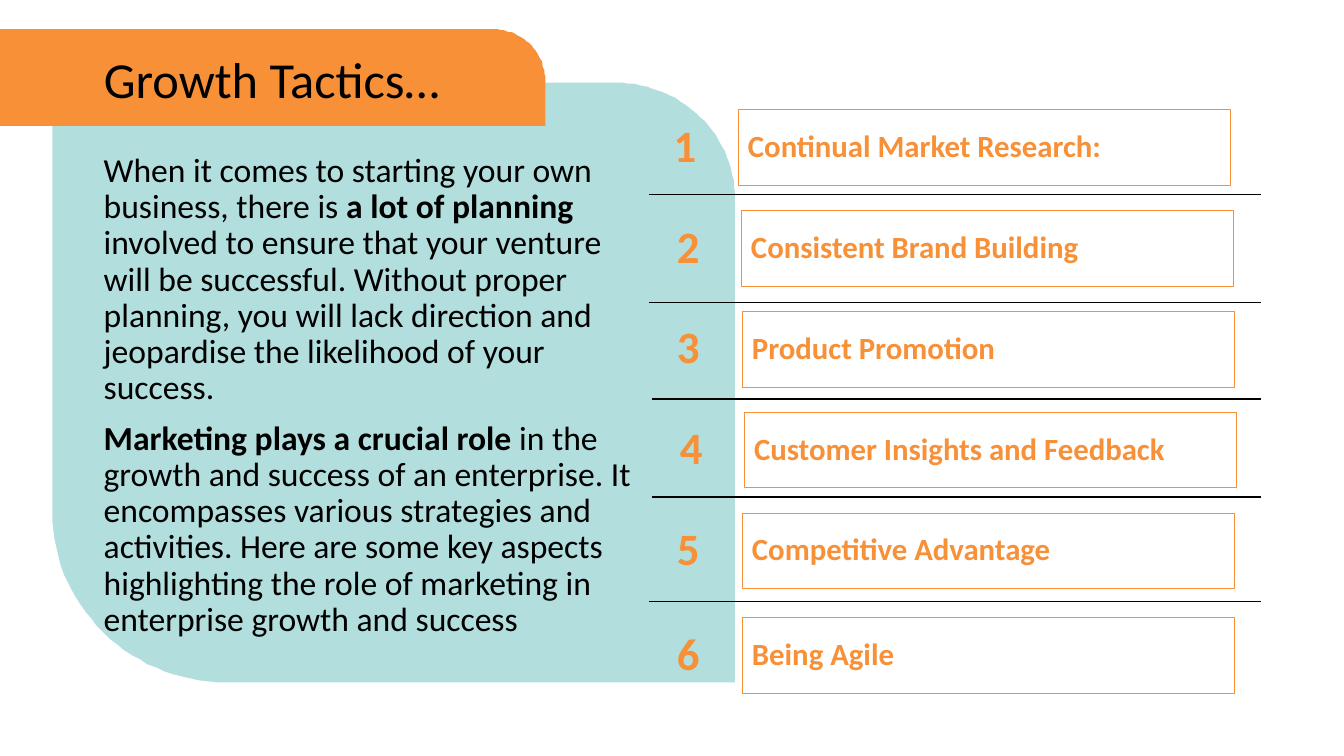
from math import cos, radians, sin

from lxml import etree
from pptx import Presentation
from pptx.dml.color import RGBColor
from pptx.enum.shapes import MSO_CONNECTOR, MSO_SHAPE
from pptx.enum.text import MSO_ANCHOR, MSO_AUTO_SIZE, PP_ALIGN
from pptx.oxml.ns import qn
from pptx.util import Pt

PX = 9144  # 100 px to the inch
RECTANGLE, STRAIGHT = MSO_SHAPE.RECTANGLE, MSO_CONNECTOR.STRAIGHT
TOP, MIDDLE = MSO_ANCHOR.TOP, MSO_ANCHOR.MIDDLE
LEFT, CENTER = PP_ALIGN.LEFT, PP_ALIGN.CENTER
NO_AUTOFIT = MSO_AUTO_SIZE.NONE
color = RGBColor.from_string
ORANGE, TEAL, BLACK = "F79037", "B2DEDD", "000000"
TITLE_ONLY = 5


def write(shape, paragraphs, size, ink=BLACK, align=LEFT, anchor=MIDDLE):
    """Each paragraph is a list of (text, bold) runs."""
    frame = shape.text_frame
    frame.word_wrap = True
    frame.auto_size = NO_AUTOFIT
    frame.vertical_anchor = anchor
    for index, runs in enumerate(paragraphs):
        paragraph = frame.add_paragraph() if index else frame.paragraphs[0]
        paragraph.alignment = align
        paragraph.line_spacing = 0.9
        paragraph.space_before = Pt(10)
        for text, bold in runs:
            run = paragraph.add_run()
            run.text = text
            run.font.name = "Calibri"
            run.font.size = Pt(size)
            run.font.bold = bold
            run.font.color.rgb = color(ink)


def arc(center_x, center_y, radius_x, radius_y, start):
    """Points of a quarter turn, clockwise from the start angle."""
    angles = [radians(start + 3 * step) for step in range(31)]
    return [(center_x + radius_x * cos(a), center_y + radius_y * sin(a)) for a in angles]


presentation = Presentation()
presentation.slide_width = 1333 * PX
presentation.slide_height = 750 * PX
slide = presentation.slides.add_slide(presentation.slide_layouts[TITLE_ONLY])
shapes = slide.shapes

# Teal panel and orange title band
panel = [(52, 82), *arc(611, 197, 118, 115, -90), (729, 677), *arc(225, 508, 173, 169, 90)]
band = [(0, 29), *arc(489, 81, 52, 52, -90), (541, 125), (0, 125)]
for outline, fill in ((panel, TEAL), (band, ORANGE)):
    builder = shapes.build_freeform(*outline[0], scale=PX)
    builder.add_line_segments(outline[1:], close=True)
    shape = builder.convert_to_shape()
    shape.shadow.inherit = False
    shape.fill.solid()
    shape.fill.fore_color.rgb = color(fill)
    shape.line.fill.background()

# Title, brought in front of its band
title = shapes.title
title.left, title.top, title.width, title.height = 93 * PX, 42 * PX, 551 * PX, 79 * PX
write(title, [[("Growth Tactics…", False)]], size=36)
shapes.element.append(title.element)

# Introduction
introduction = shapes.add_textbox(93 * PX, 147 * PX, 565 * PX, 511 * PX)
write(introduction, [
    [("When it comes to starting your own business, there is ", False),
     ("a lot of planning ", True),
     ("involved to ensure that your venture will be successful. Without proper planning, "
      "you will lack direction and jeopardise the likelihood of your success.", False)],
    [("Marketing plays a crucial role ", True),
     ("in the growth and success of an enterprise. It encompasses various strategies and "
      "activities. Here are some key aspects highlighting the role of marketing in "
      "enterprise growth and success", False)],
], size=24, anchor=TOP)

# Divider lines
for left, y in ((644, 193), (644, 300), (647, 396), (647, 493), (644, 597)):
    divider = shapes.add_connector(STRAIGHT, left * PX, y * PX, 1251 * PX, y * PX)
    divider.line.color.rgb = color(BLACK)
    divider.line.width = Pt(1)
    etree.SubElement(divider.element.spPr, qn("a:effectLst"))

# Numbered tactics: number left, box left, top, label
tactics = [
    (641, 732, 109, "Continual Market Research:"),
    (644, 735, 209, "Consistent Brand Building"),
    (644, 736, 309, "Product Promotion"),
    (647, 738, 409, "Customer Insights and Feedback"),
    (644, 736, 509, "Competitive Advantage"),
    (644, 736, 613, "Being Agile"),
]
for position, (number_left, box_left, top, label) in enumerate(tactics, start=1):
    number = shapes.add_textbox(number_left * PX, top * PX, 77 * PX, 75 * PX)
    write(number, [[(str(position), True)]], size=32, ink=ORANGE, align=CENTER)
    box = shapes.add_shape(RECTANGLE, box_left * PX, top * PX, 488 * PX, 75 * PX)
    box.shadow.inherit = False
    box.fill.background()
    box.line.color.rgb = color(ORANGE)
    box.line.width = Pt(0.75)
    write(box, [[(label, True)]], size=22, ink=ORANGE)

presentation.save("out.pptx")
